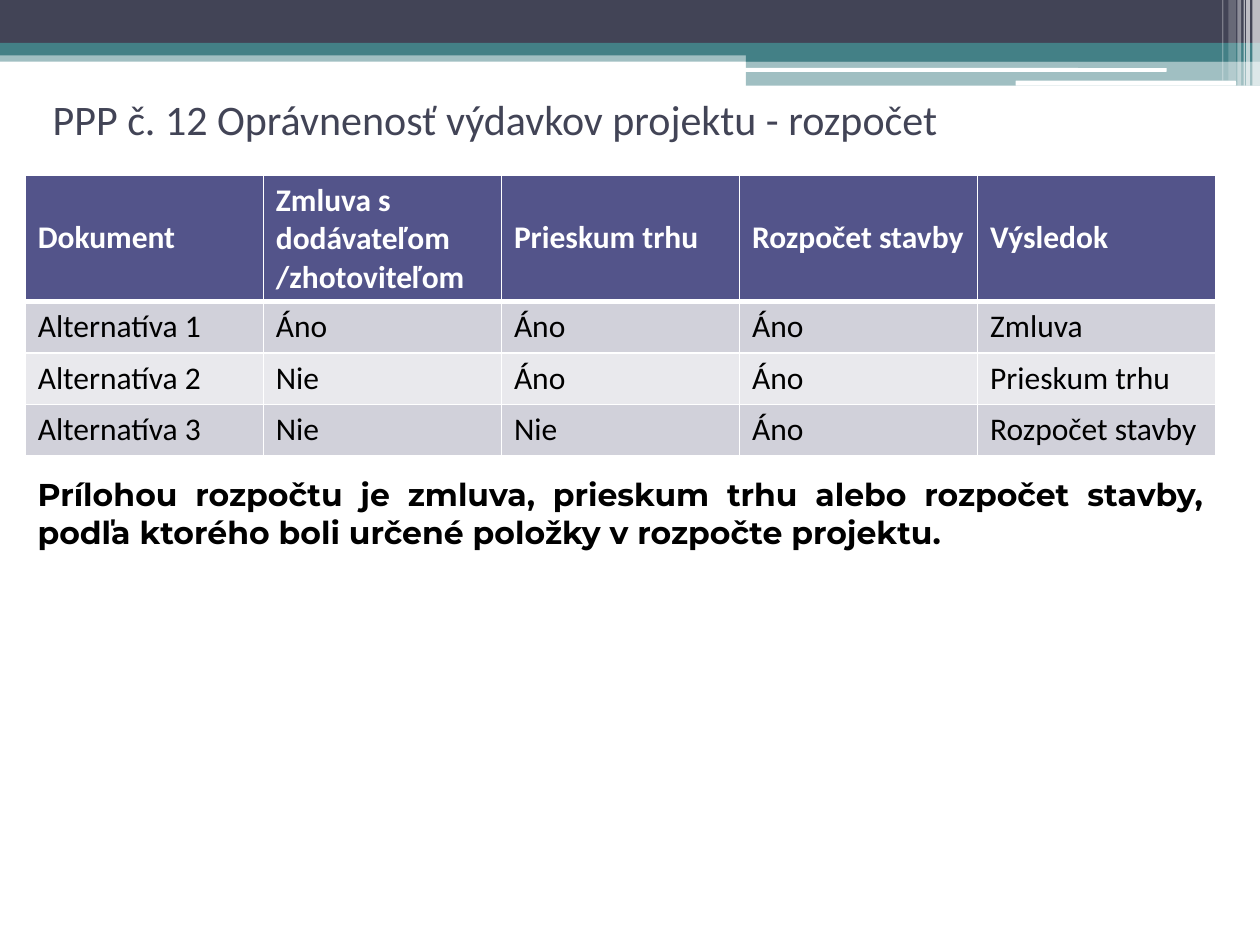
from typing import NamedTuple

from lxml.etree import SubElement
from pptx import Presentation
from pptx.dml.color import RGBColor
from pptx.enum.shapes import MSO_SHAPE
from pptx.enum.text import MSO_ANCHOR, PP_ALIGN
from pptx.oxml.ns import qn
from pptx.util import Inches, Pt

HUES = {
    "dark": "424456", "teal": "438086", "white": "FFFFFF", "black": "000000",
    "head": "53548A", "odd": "D1D1DA", "even": "E9E9ED",
}


class Band(NamedTuple):
    left: float
    top: float
    width: float
    height: float
    hue: str
    alpha: int = 100
    round: bool = False


class Label(NamedTuple):
    top: float
    left: float
    width: float
    height: float
    text: str
    size: int
    face: str
    hue: str
    bold: bool
    anchor: MSO_ANCHOR


BANDS = [
    Band(0, 0.4, 10, 0.09, "teal", 50),
    Band(0, 0, 10, 0.34, "dark"),
    Band(0, 0.34, 10, 0.1, "teal"),
    Band(5.92, 0.39, 4.08, 0.1, "teal"),
    Band(5.92, 0.48, 4.08, 0.2, "teal", 50),
    Band(5.91, 0.54, 3.35, 0.03, "white", round=True),
    Band(8.06, 0.64, 1.75, 0.04, "white", round=True),
    Band(9.94, 0, 0.06, 0.68, "white", 65),
    Band(9.89, 0, 0.03, 0.68, "white", 65),
    Band(9.87, 0, 0.01, 0.68, "white", 60),
    Band(9.82, 0, 0.03, 0.68, "white", 40),
    Band(9.75, 0, 0.06, 0.64, "white", 20),
    Band(9.7, 0, 0.01, 0.64, "white", 30),
]
TITLE = Label(0.6, 0.32, 9.49, 0.69,
              "PPP č. 12 Oprávnenosť výdavkov projektu - rozpočet",
              24, "Calibri", "dark", False, MSO_ANCHOR.MIDDLE)
NOTE = Label(3.72, 0.2, 9.45, 0.71,
             "Prílohou rozpočtu je zmluva, prieskum trhu alebo rozpočet stavby, "
             "podľa ktorého boli určené položky v rozpočte projektu.",
             18, "Montserrat", "black", True, MSO_ANCHOR.TOP)
ROWS = [
    ["Dokument", "Zmluva s dodávateľom /zhotoviteľom", "Prieskum trhu",
     "Rozpočet stavby", "Výsledok"],
    ["Alternatíva 1", "Áno", "Áno", "Áno", "Zmluva"],
    ["Alternatíva 2", "Nie", "Áno", "Áno", "Prieskum trhu"],
    ["Alternatíva 3", "Nie", "Nie", "Áno", "Rozpočet stavby"],
]


def tint(name: str) -> RGBColor:
    """Return the named colour."""
    return RGBColor.from_string(HUES[name])


def style(para, size: int, face: str, hue: str, bold: bool) -> None:
    """Set the font of a paragraph."""
    font = para.font
    font.size, font.name, font.bold = Pt(size), face, bold
    font.color.rgb = tint(hue)


def draw_band(slide, band: Band) -> None:
    """Draw one bar of the header."""
    kind = MSO_SHAPE.ROUNDED_RECTANGLE if band.round else MSO_SHAPE.RECTANGLE
    shape = slide.shapes.add_shape(kind, *map(Inches, band[:4]))
    shape.shadow.inherit = False
    shape.line.fill.background()
    shape.fill.solid()
    shape.fill.fore_color.rgb = tint(band.hue)
    if band.alpha < 100:
        color = shape.fill._xPr.find(qn("a:solidFill"))[0]
        SubElement(color, qn("a:alpha"), val=str(band.alpha * 1000))


def draw_label(slide, label: Label) -> None:
    """Draw a justified line of text."""
    box = slide.shapes.add_textbox(Inches(label.left), Inches(label.top),
                                   Inches(label.width), Inches(label.height))
    frame = box.text_frame
    frame.word_wrap = True
    frame.vertical_anchor = label.anchor
    para = frame.paragraphs[0]
    para.text = label.text
    para.alignment = PP_ALIGN.JUSTIFY
    style(para, label.size, label.face, label.hue, label.bold)


def draw_edge(cell, side: str, width: float) -> None:
    """Give one side of a cell a white border."""
    line = SubElement(cell._tc.get_or_add_tcPr(), qn(f"a:ln{side}"),
                      w=str(Pt(width)))
    fill = SubElement(line, qn("a:solidFill"))
    SubElement(fill, qn("a:srgbClr"), val=HUES["white"])


def draw_table(slide, rows: list[list[str]]) -> None:
    """Draw the table of alternatives."""
    count = len(rows[0])
    table = slide.shapes.add_table(len(rows), count, Inches(0.2), Inches(1.39),
                                   Inches(9.45), Inches(2.22)).table
    for col in table.columns:
        col.width = Inches(9.45 / count)
    for i, row in enumerate(rows):
        head = i == 0
        table.rows[i].height = Inches(1 if head else 0.41)
        hue = "head" if head else "odd" if i % 2 else "even"
        for j, text in enumerate(row):
            cell = table.cell(i, j)
            for side in "LRTB":
                thick = (head and side == "B") or (i == 1 and side == "T")
                draw_edge(cell, side, 3 if thick else 1)
            cell.fill.solid()
            cell.fill.fore_color.rgb = tint(hue)
            cell.vertical_anchor = MSO_ANCHOR.MIDDLE if head else MSO_ANCHOR.TOP
            para = cell.text_frame.paragraphs[0]
            para.text = text
            style(para, 18, "Calibri", "white" if head else "black", head)


def main() -> None:
    """Build the slide and save it."""
    deck = Presentation()
    deck.slide_width, deck.slide_height = Inches(10), Inches(7.5)
    slide = deck.slides.add_slide(deck.slide_layouts[6])
    for band in BANDS:
        draw_band(slide, band)
    draw_label(slide, TITLE)
    draw_table(slide, ROWS)
    draw_label(slide, NOTE)
    deck.save("out.pptx")


if __name__ == "__main__":
    main()
